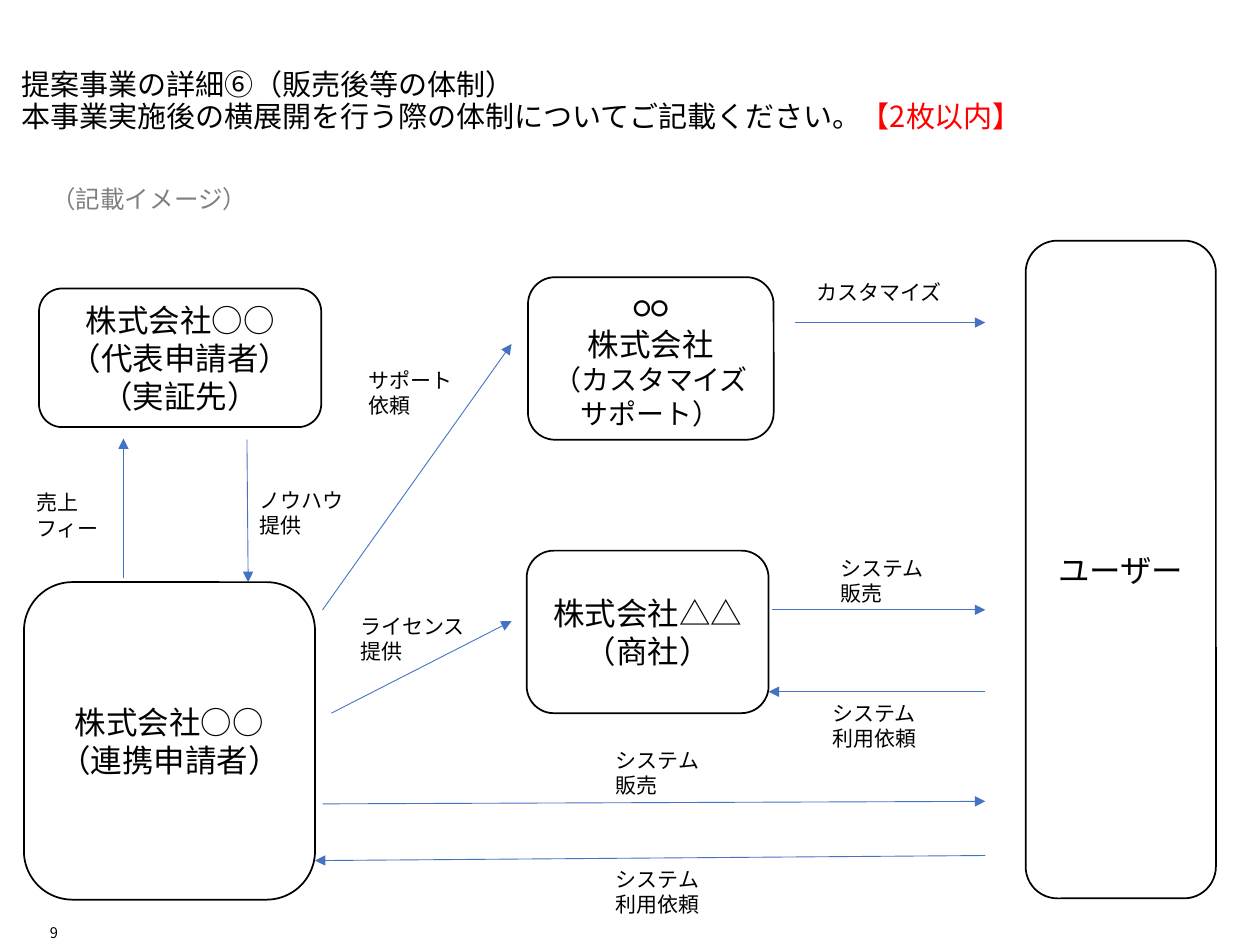
from pptx import Presentation
from pptx import util as u
from pptx.dml.color import RGBColor
from pptx.enum import shapes, text
from pptx.oxml.ns import qn
from lxml import etree

CELL = 0.1
BLACK, RED, GREY, BLUE = "000000", "FF0000", "808080", "4472C4"
LEFT, CENTER, RIGHT = text.PP_ALIGN.LEFT, text.PP_ALIGN.CENTER, text.PP_ALIGN.RIGHT
MIDDLE, TOP, BOTTOM = text.MSO_ANCHOR.MIDDLE, text.MSO_ANCHOR.TOP, text.MSO_ANCHOR.BOTTOM
USER_EDGE = 78.2


def color(hex_code):
    """Turn a hex string into a colour."""
    return RGBColor.from_string(hex_code)


def cells(*counts):
    """Turn counts of grid columns or rows into lengths."""
    return [u.Inches(count * CELL) for count in counts]


def apply(target, **values):
    """Set attributes from a dict of format values."""
    for key, value in values.items():
        setattr(target, key, value)


class Diagram:
    """Draws elements in one style on the current slide, on a grid of 100 by 75 cells."""

    def __init__(self, slide, font="Calibri", heading_font="Noto Sans CJK JP"):
        """Keep the slide and the fonts."""
        self.slide, self.font, self.heading_font = slide, font, heading_font

    def add_words(self, paragraph, words, size, ink=BLACK, font=None):
        """Add one formatted run."""
        run = paragraph.add_run()
        run.text = words
        apply(run.font, name=font or self.font, size=u.Pt(size))
        run.font.color.rgb = color(ink)

    def title(self, place, lines, limit, size=16.6):
        """Place the title and end it with the red page limit."""
        heading = self.slide.shapes.title
        apply(heading, **dict(zip(("left", "top", "width", "height"), cells(*place))))
        apply(heading.text_frame, margin_left=0, margin_right=0, margin_top=0, margin_bottom=0,
              vertical_anchor=MIDDLE, word_wrap=True, auto_size=text.MSO_AUTO_SIZE.NONE)
        paragraph = heading.text_frame.paragraphs[0]
        apply(paragraph, alignment=LEFT, line_spacing=0.9)
        for index, line in enumerate(lines):
            if index:
                paragraph.add_line_break()
            self.add_words(paragraph, line, size, font=self.heading_font)
        self.add_words(paragraph, limit, size, RED, self.heading_font)

    def party(self, place, *lines):
        """Draw a rounded box; each line is its words and size."""
        box = self.slide.shapes.add_shape(shapes.MSO_SHAPE.ROUNDED_RECTANGLE, *cells(*place))
        box.shadow.inherit = False
        box.fill.background()
        box.line.color.rgb = color(BLACK)
        box.line.width = u.Pt(1)
        apply(box.text_frame, vertical_anchor=MIDDLE, word_wrap=True)
        for index, (words, size) in enumerate(lines):
            frame = box.text_frame
            paragraph = frame.add_paragraph() if index else frame.paragraphs[0]
            paragraph.alignment = CENTER
            self.add_words(paragraph, words, size)

    def label(self, place, words, size=12, ink=BLACK, font=None, align=LEFT, **frame_format):
        """Add a text box."""
        frame = self.slide.shapes.add_textbox(*cells(*place)).text_frame
        apply(frame, **{"word_wrap": True, "vertical_anchor": TOP, **frame_format})
        frame.paragraphs[0].alignment = align
        self.add_words(frame.paragraphs[0], words, size, ink, font)

    def flow(self, start, end):
        """Draw a thin arrow from start to end."""
        arrow = self.slide.shapes.add_connector(shapes.MSO_CONNECTOR.STRAIGHT, *cells(*start, *end))
        arrow.line.color.rgb = color(BLUE)
        arrow.line.width = u.Pt(0.5)
        properties = arrow._element.spPr
        etree.SubElement(properties.get_or_add_ln(), qn("a:tailEnd"), type="triangle")
        etree.SubElement(properties, qn("a:effectLst"))


def main():
    """Build the slide and save it."""
    deck = Presentation()
    apply(deck, slide_width=u.Inches(10), slide_height=u.Inches(7.5))
    diagram = Diagram(deck.slides.add_slide(deck.slide_layouts[5]))

    diagram.title((1.7, 2.9, 96.5, 10.4),
                  ("提案事業の詳細⑥（販売後等の体制）",
                   "本事業実施後の横展開を行う際の体制についてご記載ください。"),
                  "【2枚以内】")
    diagram.label((3.1, 14.1, 17.7, 3.4), "（記載イメージ）", 14, GREY, word_wrap=False)
    diagram.label((2.8, 72.9, 1.8, 1.8), "9", 8.4, font=diagram.heading_font, align=RIGHT,
                  vertical_anchor=BOTTOM, margin_left=0, margin_right=0,
                  margin_top=0, margin_bottom=0)

    parties = [
        ((3.1, 22.9, 22.4, 11), ("株式会社○○", 18), ("（代表申請者）", 18), ("（実証先）", 18)),
        ((1.9, 46.2, 23.1, 25.2), ("株式会社○○", 18), ("（連携申請者）", 18)),
        ((41.9, 22, 19.5, 12.9), ("○○", 18), ("株式会社", 18), ("（カスタマイズサポート）", 16)),
        ((41.8, 43.7, 19.2, 12.9), ("株式会社△△", 18), ("（商社）", 18)),
        ((81.4, 19.1, 15.1, 52.2), ("ユーザー", 18)),
    ]
    for place, *lines in parties:
        diagram.party(place, *lines)

    flows = [
        ((9.8, 45.9), (9.8, 34.8), (1.9, 38.4, 9.8, 5), "売上フィー"),
        ((19.6, 34.9), (19.7, 46.2), (19.6, 38.2, 9.8, 5), "ノウハウ提供"),
        ((25.6, 48.4), (40.6, 27.3), (28.3, 28.7, 9.8, 5), "サポート依頼"),
        ((26.3, 56.6), (40.6, 49.3), (27.6, 48.2, 10.6, 5), "ライセンス提供"),
        ((63.1, 25.6), (USER_EDGE, 25.6), (63.8, 21.7, 13, 3), "カスタマイズ"),
        ((61.3, 48.4), (USER_EDGE, 48.4), (65.7, 43.6, 9.8, 5), "システム販売"),
        ((USER_EDGE, 54.9), (61, 54.9), (65.1, 55.1, 9.8, 5), "システム利用依頼"),
        ((25.6, 63.8), (USER_EDGE, 63.6), (47.9, 58.8, 9.8, 5), "システム販売"),
        ((USER_EDGE, 67.9), (25, 68.3), (47.9, 68.3, 9.8, 5), "システム利用依頼"),
    ]
    for start, end, place, words in flows:
        diagram.flow(start, end)
        diagram.label(place, words)

    deck.save("out.pptx")


if __name__ == "__main__":
    main()
